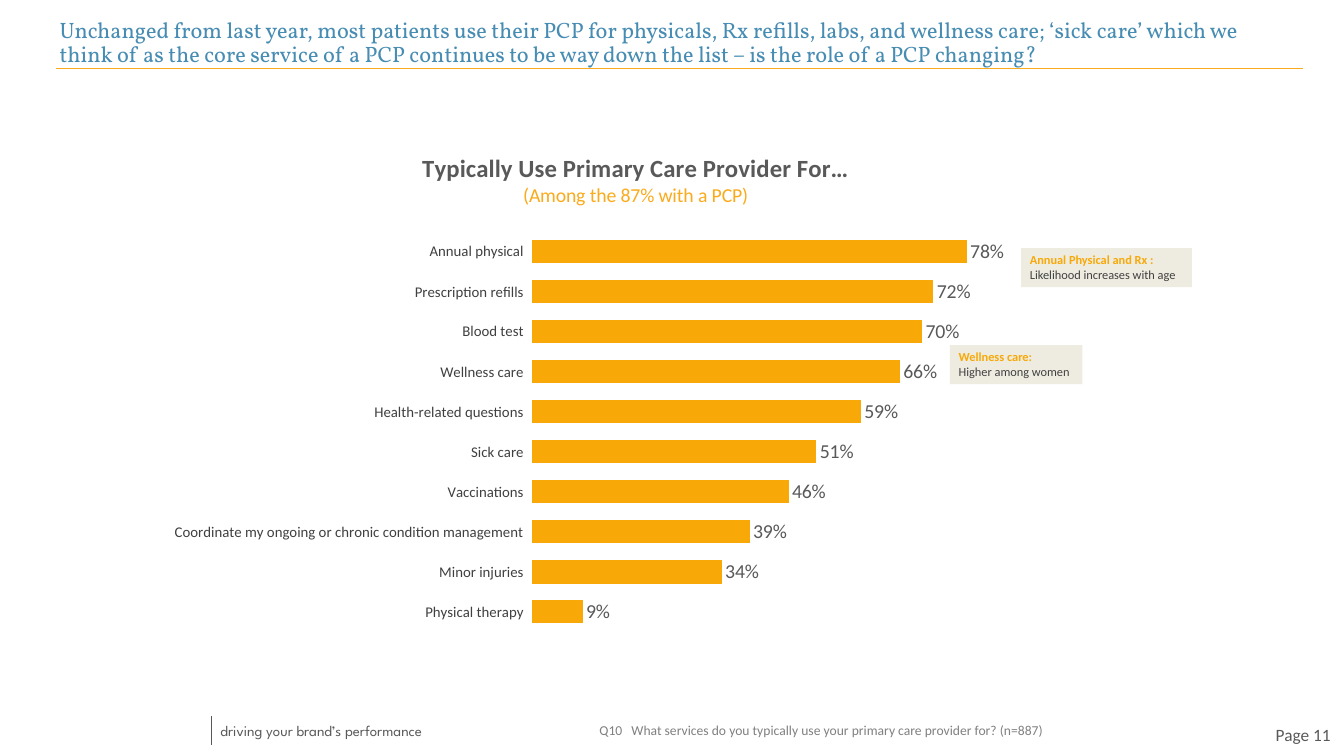
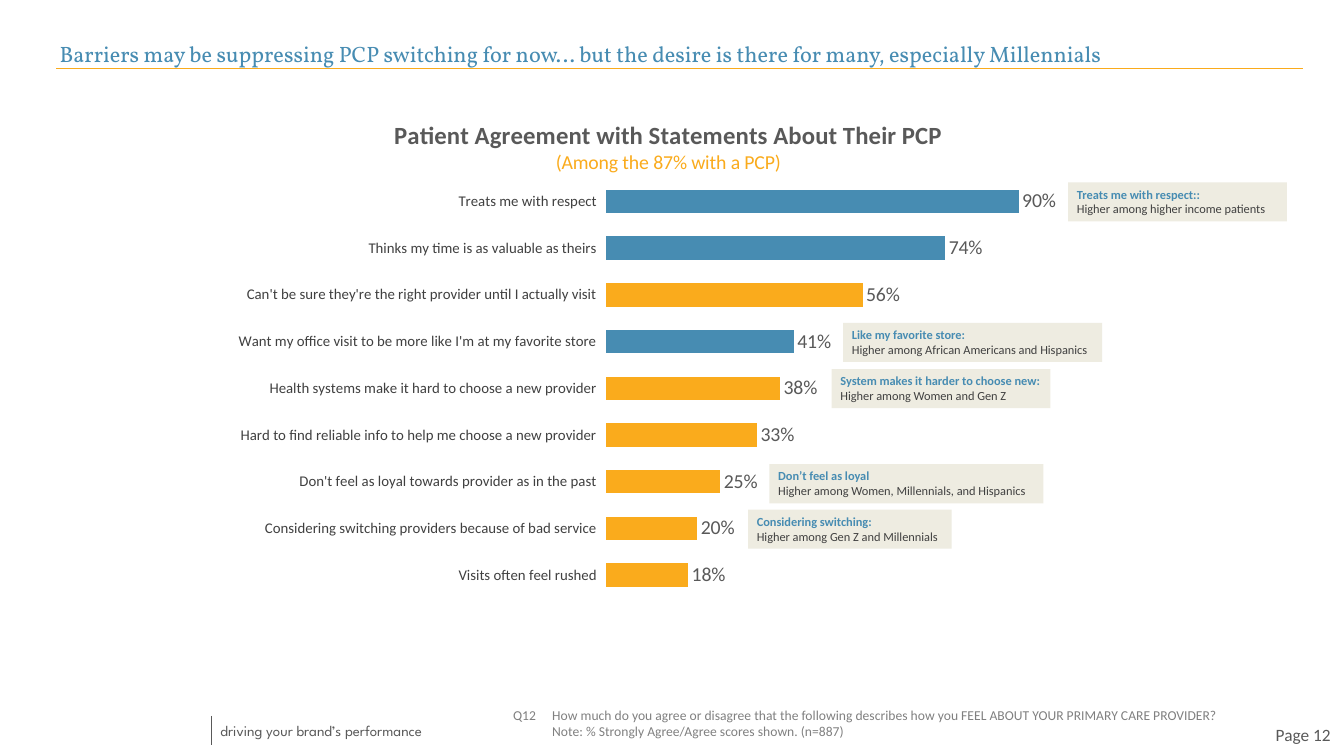
from dataclasses import dataclass

from lxml import etree
from pptx import Presentation
from pptx.chart.data import CategoryChartData
from pptx.dml.color import RGBColor
from pptx.enum.chart import XL_CHART_TYPE, XL_LABEL_POSITION, XL_TICK_LABEL_POSITION, XL_TICK_MARK
from pptx.enum.shapes import MSO_CONNECTOR, MSO_SHAPE
from pptx.enum.text import MSO_ANCHOR, MSO_AUTO_SIZE, PP_ALIGN
from pptx.oxml.ns import qn
from pptx.util import Pt

BAR_CLUSTERED = XL_CHART_TYPE.BAR_CLUSTERED
OUTSIDE_END = XL_LABEL_POSITION.OUTSIDE_END
LABELS_LOW = XL_TICK_LABEL_POSITION.LOW
NO_TICK = XL_TICK_MARK.NONE
STRAIGHT = MSO_CONNECTOR.STRAIGHT
RECTANGLE = MSO_SHAPE.RECTANGLE
TOP, MIDDLE, BOTTOM = MSO_ANCHOR.TOP, MSO_ANCHOR.MIDDLE, MSO_ANCHOR.BOTTOM
LEFT, RIGHT = PP_ALIGN.LEFT, PP_ALIGN.RIGHT
NO_FIT = MSO_AUTO_SIZE.NONE

BLUE = RGBColor(0x47, 0x8C, 0xB2)
GOLD = RGBColor(0xFA, 0xAB, 0x1C)
AMBER = RGBColor(0xF8, 0xA9, 0x08)
SAND = RGBColor(0xEE, 0xEC, 0xE1)
DARK = RGBColor(0x40, 0x40, 0x40)
SLATE = RGBColor(0x59, 0x59, 0x59)
GREY = RGBColor(0x80, 0x80, 0x80)

BODY_FONT, TITLE_FONT, TAGLINE_FONT = "Calibri", "Vollkorn", "League Spartan"
EMU_PER_PX = 9144  # 100 px to the inch
TITLE_BOTTOM = 82
CALLOUT_HEIGHT = 44


@dataclass(frozen=True)
class Box:
    left: int
    top: int
    width: int
    height: int

    def emu(self) -> tuple[int, ...]:
        return tuple(px(side) for side in (self.left, self.top, self.width, self.height))


@dataclass(frozen=True)
class Bar:
    label: str
    value: float
    color: RGBColor = AMBER


@dataclass(frozen=True)
class BarChart:
    box: Box
    heading: str
    heading_at: tuple[float, float]
    plot: tuple[float, float, float, float]
    maximum: float
    gap: int
    bars: list[Bar]


@dataclass(frozen=True)
class Callout:
    left: int
    top: int
    width: int
    heading: str
    detail: str


@dataclass(frozen=True)
class Question:
    box: Box
    tab: int
    lines: list[str]


@dataclass(frozen=True)
class Page:
    number: int
    title: str
    title_height: int
    chart: BarChart
    callout_color: RGBColor
    callouts: list[Callout]
    question: Question


def px(length: int) -> int:
    return length * EMU_PER_PX


def style_font(font, size: int, color: RGBColor, bold: bool = False, name: str = BODY_FONT) -> None:
    font.size, font.bold, font.name = Pt(size), bold, name
    font.color.rgb = color


def add_span(para, text: str, size: int, color: RGBColor, bold: bool = False,
             name: str = BODY_FONT) -> None:
    span = para.add_run()
    span.text = text
    style_font(span.font, size, color, bold, name)


def set_frame(frame, anchor=TOP, side: int = 10, edge: int = 5) -> None:
    frame.word_wrap = True
    frame.auto_size = NO_FIT
    frame.vertical_anchor = anchor
    frame.margin_left = frame.margin_right = px(side)
    frame.margin_top = frame.margin_bottom = px(edge)


def add_text_box(slide, box: Box, anchor=TOP):
    frame = slide.shapes.add_textbox(*box.emu()).text_frame
    set_frame(frame, anchor)
    return frame


def add_line(slide, start: tuple[int, int], end: tuple[int, int], color: RGBColor,
             weight: float) -> None:
    line = slide.shapes.add_connector(STRAIGHT, *map(px, start + end))
    line.line.color.rgb = color
    line.line.width = Pt(weight)
    etree.SubElement(line._element.spPr, qn("a:effectLst"))


def add_title(slide, text: str, height: int) -> None:
    title = slide.shapes.title
    box = Box(56, TITLE_BOTTOM - height, 1408, height)
    title.left, title.top, title.width, title.height = box.emu()
    set_frame(title.text_frame, BOTTOM, 11, 6)
    para = title.text_frame.paragraphs[0]
    para.alignment, para.line_spacing = LEFT, 0.9
    add_span(para, text, 18, BLUE, name=TITLE_FONT)


def add_furniture(slide, number: int) -> None:
    """Draw the title rule, the tagline and the page number."""
    add_line(slide, (63, 77), (1465, 77), GOLD, 1)
    tagline = add_text_box(slide, Box(238, 806, 295, 30))
    add_span(tagline.paragraphs[0], "driving your brand’s performance", 12, SLATE,
             name=TAGLINE_FONT)
    add_line(slide, (238, 805), (238, 838), SLATE, 0.75)
    page_number = add_text_box(slide, Box(1375, 810, 131, 33), MIDDLE)
    page_number.paragraphs[0].alignment = RIGHT
    add_span(page_number.paragraphs[0], f"Page {number}", 14, SLATE)


def set_layout(parent, index: int, **settings) -> None:
    """Give a chart part a manual layout, as fractions of the chart."""
    for old in parent.findall(qn("c:layout")):
        parent.remove(old)
    layout = etree.Element(qn("c:layout"))
    manual = etree.SubElement(layout, qn("c:manualLayout"))
    for tag, value in settings.items():
        etree.SubElement(manual, qn(f"c:{tag}")).set("val", str(value))
    parent.insert(index, layout)


def add_chart_title(chart, spec: BarChart) -> None:
    frame = chart.chart_title.text_frame
    add_span(frame.paragraphs[0], spec.heading, 20, SLATE, True)
    add_span(frame.add_paragraph(), "(Among the 87% with a PCP)", 16, GOLD)
    x, y = spec.heading_at
    set_layout(chart.chart_title._element, 1, xMode="edge", yMode="edge", x=x, y=y)


def add_bar_chart(slide, spec: BarChart) -> None:
    data = CategoryChartData(number_format="0%")
    data.categories = [bar.label for bar in spec.bars]
    data.add_series("Series 1", [bar.value for bar in spec.bars])
    chart = slide.shapes.add_chart(BAR_CLUSTERED, *spec.box.emu(), data).chart
    style_font(chart.font, 10, DARK)
    chart.has_legend = False
    add_chart_title(chart, spec)
    x, y, width, height = spec.plot
    set_layout(chart._chartSpace.chart.plotArea, 0, layoutTarget="inner", xMode="edge",
               yMode="edge", x=x, y=y, w=width, h=height)

    categories, values = chart.category_axis, chart.value_axis
    categories.reverse_order = True
    categories.major_tick_mark = categories.minor_tick_mark = NO_TICK
    categories.tick_label_position = LABELS_LOW
    categories.format.line.fill.background()
    style_font(categories.tick_labels.font, 12, DARK)
    values.minimum_scale, values.maximum_scale = 0, spec.maximum
    values.has_major_gridlines = False
    values.visible = False

    plot = chart.plots[0]
    plot.gap_width = spec.gap
    plot.vary_by_categories = False
    plot.has_data_labels = True
    labels = plot.data_labels
    labels.show_value = True
    labels.number_format, labels.number_format_is_linked = "0%", False
    labels.position = OUTSIDE_END
    style_font(labels.font, 16, SLATE)

    series = plot.series[0]
    main_color = spec.bars[0].color
    series.format.fill.solid()
    series.format.fill.fore_color.rgb = main_color
    for index, bar in enumerate(spec.bars):
        if bar.color != main_color:
            fill = series.points[index].format.fill
            fill.solid()
            fill.fore_color.rgb = bar.color


def add_callout(slide, callout: Callout, color: RGBColor) -> None:
    box = Box(callout.left, callout.top, callout.width, CALLOUT_HEIGHT)
    shape = slide.shapes.add_shape(RECTANGLE, *box.emu())
    shape.shadow.inherit = False
    shape.fill.solid()
    shape.fill.fore_color.rgb = SAND
    shape.line.fill.background()
    frame = shape.text_frame
    set_frame(frame)
    heading, detail = frame.paragraphs[0], frame.add_paragraph()
    heading.alignment = detail.alignment = LEFT
    add_span(heading, callout.heading, 10, color, True)
    add_span(detail, callout.detail, 10, DARK)


def add_question(slide, question: Question) -> None:
    """Write the survey question; later lines align with the tab stop."""
    frame = add_text_box(slide, question.box)
    for index, line in enumerate(question.lines):
        para = frame.add_paragraph() if index else frame.paragraphs[0]
        properties = para._p.get_or_add_pPr()
        if index:
            properties.set("marL", str(px(question.tab)))
        else:
            tabs = etree.SubElement(properties, qn("a:tabLst"))
            etree.SubElement(tabs, qn("a:tab"), pos=str(px(question.tab)), algn="l")
        add_span(para, line, 11, GREY)


PAGES = [
    Page(
        11,
        "Unchanged from last year, most patients use their PCP for physicals, Rx refills, labs, "
        "and wellness care; ‘sick care’ which we think of as the core service of a PCP continues "
        "to be way down the list – is the role of a PCP changing?",
        75,
        BarChart(
            Box(182, 162, 999, 561), "Typically Use Primary Care Provider For…",
            (0.29, 0.01), (0.417, 0.176, 0.564, 0.802), 0.9, 73,
            [Bar("Annual physical", 0.78), Bar("Prescription refills", 0.72),
             Bar("Blood test", 0.70), Bar("Wellness care", 0.66),
             Bar("Health-related questions", 0.59), Bar("Sick care", 0.51),
             Bar("Vaccinations", 0.46),
             Bar("Coordinate my ongoing or chronic condition management", 0.39),
             Bar("Minor injuries", 0.34), Bar("Physical therapy", 0.09)]),
        AMBER,
        [Callout(1148, 279, 192, "Annual Physical and Rx :", "Likelihood increases with age"),
         Callout(1068, 388, 149, "Wellness care:", "Higher among women")],
        Question(Box(664, 807, 525, 29), 36, [
            "Q10\tWhat services do you typically use your primary care provider for? (n=887)"]),
    ),
    Page(
        12,
        "Barriers may be suppressing PCP switching for now… but the desire is there for many, "
        "especially Millennials",
        45,
        BarChart(
            Box(214, 125, 983, 558), "Patient Agreement with Statements About Their PCP",
            (0.23, 0.01), (0.475, 0.135, 0.525, 0.847), 1, 100,
            [Bar("Treats me with respect", 0.90, BLUE),
             Bar("Thinks my time is as valuable as theirs", 0.74, BLUE),
             Bar("Can't be sure they're the right provider until I actually visit", 0.56, GOLD),
             Bar("Want my office visit to be more like I'm at my favorite store", 0.41, BLUE),
             Bar("Health systems make it hard to choose a new provider", 0.38, GOLD),
             Bar("Hard to find reliable info to help me choose a new provider", 0.33, GOLD),
             Bar("Don't feel as loyal towards provider as in the past", 0.25, GOLD),
             Bar("Considering switching providers because of bad service", 0.20, GOLD),
             Bar("Visits often feel rushed", 0.18, GOLD)]),
        BLUE,
        [Callout(1201, 205, 246, "Treats me with respect::", "Higher among higher income patients"),
         Callout(948, 363, 291, "Like my favorite store:",
                 "Higher among African Americans and Hispanics"),
         Callout(935, 415, 246, "System makes it harder to choose new:",
                 "Higher among Women and Gen Z"),
         Callout(865, 522, 308, "Don’t feel as loyal",
                 "Higher among Women, Millennials, and Hispanics"),
         Callout(841, 573, 229, "Considering switching:", "Higher among Gen Z and Millennials")],
        Question(Box(567, 790, 814, 47), 44, [
            "Q12\tHow much do you agree or disagree that the following describes how you "
            "FEEL ABOUT YOUR PRIMARY CARE PROVIDER?",
            "Note: % Strongly Agree/Agree scores shown. (n=887)"]),
    ),
]


def main() -> None:
    deck = Presentation()
    deck.slide_width, deck.slide_height = px(1511), px(850)
    title_only = deck.slide_layouts[5]
    for page in PAGES:
        slide = deck.slides.add_slide(title_only)
        add_title(slide, page.title, page.title_height)
        add_furniture(slide, page.number)
        add_bar_chart(slide, page.chart)
        for callout in page.callouts:
            add_callout(slide, callout, page.callout_color)
        add_question(slide, page.question)
    deck.save("out.pptx")


if __name__ == "__main__":
    main()
